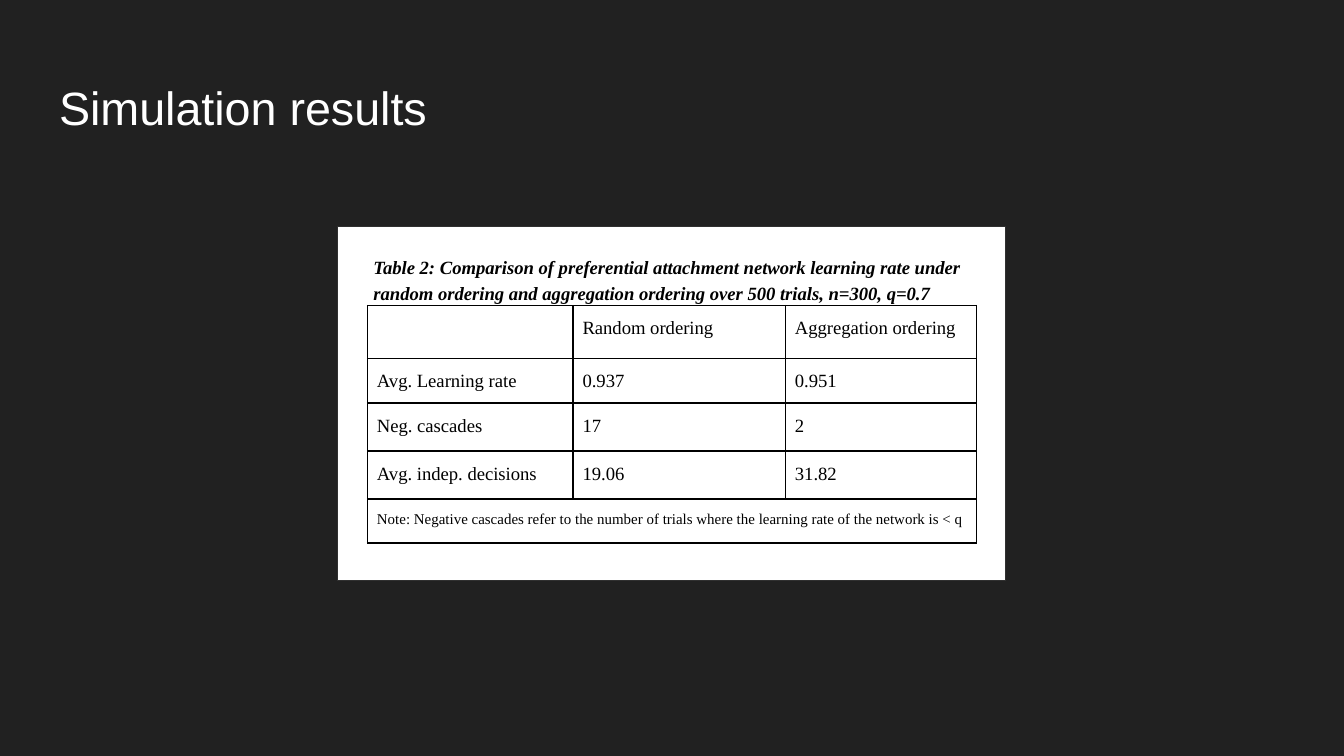
from pptx import Presentation
from pptx import util as u
from pptx.dml.color import RGBColor
from pptx.enum import shapes, text
from pptx.oxml import parse_xml
from pptx.oxml.ns import nsdecls

DARK = RGBColor(0x21, 0x21, 0x21)
EDGE = RGBColor(0x30, 0x30, 0x30)
WHITE = RGBColor(0xFF, 0xFF, 0xFF)
BLACK = RGBColor(0, 0, 0)
SANS, SERIF = "Arial", "Times New Roman"


def write(frame, words, size=10, font=SERIF, color=BLACK, bold=False,
          slant=False, lead=1.15, before=0):
    """Put one formatted paragraph into a text frame."""
    para = frame.paragraphs[0]
    para.line_spacing = lead
    para.space_before = u.Pt(before)
    if not words:  # keeps an empty cell from growing
        para._p.append(parse_xml(
            f'<a:endParaRPr {nsdecls("a")} sz="{size * 100}"/>'))
        return
    run = para.add_run()
    run.text = words
    face = run.font
    face.name, face.size = font, u.Pt(size)
    face.bold, face.italic = bold, slant
    face.color.rgb = color


class Deck:
    """Holds the style and the slide; lengths are percent of the slide."""

    def __init__(self, wide, ratio, back):
        self.prs = Presentation()
        self.prs.slide_width = u.Inches(wide)
        self.prs.slide_height = u.Inches(wide * ratio)
        self.slide = self.prs.slides.add_slide(self.prs.slide_layouts[6])
        fill = self.slide.background.fill
        fill.solid()
        fill.fore_color.rgb = back

    def across(self, share):
        return round(self.prs.slide_width * share / 100)

    def down(self, share):
        return round(self.prs.slide_height * share / 100)

    def box(self, x, y, w, h):
        return self.across(x), self.down(y), self.across(w), self.down(h)

    def label(self, words, area, anchor=text.MSO_ANCHOR.TOP, **style):
        frame = self.slide.shapes.add_textbox(*self.box(*area)).text_frame
        frame.word_wrap = True
        frame.vertical_anchor = anchor
        frame.margin_left = frame.margin_right = u.Inches(0.1)
        frame.margin_top = frame.margin_bottom = u.Inches(0.1)
        write(frame, words, **style)

    def panel(self, area, fill, line):
        rect = self.slide.shapes.add_shape(
            shapes.MSO_SHAPE.RECTANGLE, *self.box(*area))
        rect.shadow.inherit = False
        rect.fill.solid()
        rect.fill.fore_color.rgb = fill
        rect.line.color.rgb = line
        rect.line.width = u.Pt(0.75)

    def border(self, cell, side, width):
        cell._tc.get_or_add_tcPr().append(parse_xml(
            f'<a:ln{side} {nsdecls("a")} w="{u.Pt(width)}"><a:solidFill>'
            f'<a:srgbClr val="{BLACK}"/></a:solidFill></a:ln{side}>'))

    def table(self, x, y, cols, rows, data, note, thin):
        """Draw data, then a note across the last row; thin lists rules."""
        grid = self.slide.shapes.add_table(
            len(rows), len(cols),
            *self.box(x, y, sum(cols), sum(rows))).table
        grid.first_row = grid.horz_banding = False
        for col, share in zip(grid.columns, cols):
            col.width = self.across(share)
        for row, share in zip(grid.rows, rows):
            row.height = self.down(share)
        last = len(rows) - 1
        grid.cell(last, 0).merge(grid.cell(last, len(cols) - 1))
        for r in range(len(rows)):
            for c in range(len(cols)):
                cell = grid.cell(r, c)
                cell.margin_left = cell.margin_right = u.Inches(0.07)
                cell.margin_top = cell.margin_bottom = u.Inches(0.07)
                for side, rule in (("L", None), ("R", None),
                                   ("T", r), ("B", r + 1)):
                    self.border(cell, side, 0.75 if rule in thin else 1)
                cell.fill.background()
                if r < last:
                    write(cell.text_frame, data[r][c])
        write(grid.cell(last, 0).text_frame, note, size=8)


def main():
    deck = Deck(10, 9 / 16, DARK)

    # Title
    deck.label("Simulation results", (3.41, 8.7, 93.2, 11.2),
               size=25, font=SANS, color=WHITE, lead=1.0)

    # White panel behind the table
    deck.panel((25.1, 29.95, 49.7, 46.85), WHITE, EDGE)

    # Results
    deck.table(
        27.35, 40.43, (15.3, 15.8, 14.2), (7, 5.75, 6.35, 6.35, 5.8),
        (("", "Random ordering", "Aggregation ordering"),
         ("Avg. Learning rate", "0.937", "0.951"),
         ("Neg. cascades", "17", "2"),
         ("Avg. indep. decisions", "19.06", "31.82")),
        "Note: Negative cascades refer to the number of trials where "
        "the learning rate of the network is < q", thin=(1, 4))

    # Caption
    deck.label("Table 2: Comparison of preferential attachment network "
               "learning rate under random ordering and aggregation ordering "
               "over 500 trials, n=300, q=0.7", (26.8, 32.2, 46.5, 9.25),
               anchor=text.MSO_ANCHOR.MIDDLE, bold=True, slant=True, before=10)

    deck.prs.save("out.pptx")


if __name__ == "__main__":
    main()
